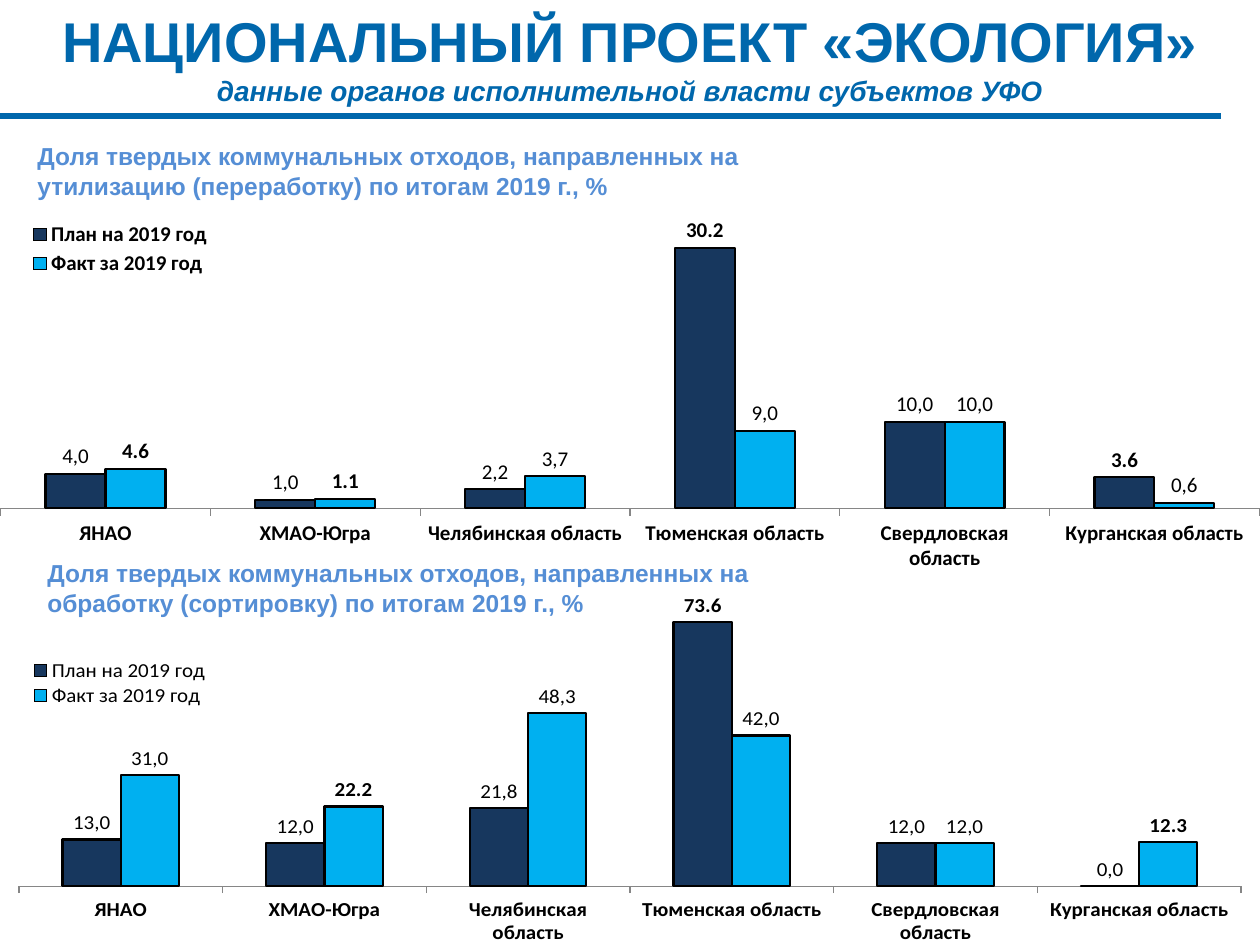
import pptx
import pptx.chart.data
import pptx.dml.color
import pptx.enum.chart
import pptx.enum.shapes
import pptx.enum.text
import pptx.oxml
import pptx.oxml.ns
import pptx.util

RGB = pptx.dml.color.RGBColor
BLUE = RGB(0x00, 0x67, 0xAC)
SOFT = RGB(0x55, 0x8E, 0xD5)
NAVY = RGB(0x17, 0x37, 0x5E)
SKY = RGB(0x00, 0xB0, 0xF0)
BLACK = RGB(0, 0, 0)
GREY = RGB(0x86, 0x86, 0x86)

SCALE = 914400 / 126
CATS = ["ЯНАО", "ХМАО-Югра", "Челябинская область", "Тюменская область",
        "Свердловская область", "Курганская область"]
NAMES = ["План на 2019 год", "Факт за 2019 год"]
qn = pptx.oxml.ns.qn


def px(n):
    return pptx.util.Emu(round(n * SCALE))


def node(tag, body=""):
    """Make a chart element from its tag and inner XML."""
    names = pptx.oxml.ns.nsdecls("c", "a")
    return pptx.oxml.parse_xml(f"<{tag} {names}>{body}</{tag}>")


def layout(box, inner=False):
    """Make a manual layout from fractions of the chart."""
    body = '<c:layoutTarget val="inner"/>' if inner else ""
    body += '<c:xMode val="edge"/><c:yMode val="edge"/>'
    body += "".join(f'<c:{k} val="{v}"/>' for k, v in zip("xywh", box))
    return node("c:layout", f"<c:manualLayout>{body}</c:manualLayout>")


class Deck:
    def __init__(self, wide, high):
        self.show = pptx.Presentation()
        self.show.slide_width, self.show.slide_height = px(wide), px(high)
        self.slide = self.show.slides.add_slide(self.show.slide_layouts[5])

    def font(self, font, size, color, bold=True, italic=False, face="Arial"):
        font.name, font.size = face, pptx.util.Pt(size)
        font.bold, font.italic = bold, italic
        font.color.rgb = color

    def title(self, box, head, sub):
        shape = self.slide.shapes.title
        shape.left, shape.top, shape.width, shape.height = map(px, box)
        frame = shape.text_frame
        frame.auto_size = pptx.enum.text.MSO_AUTO_SIZE.NONE
        frame.vertical_anchor = pptx.enum.text.MSO_ANCHOR.TOP
        frame.text = f"{head}\n{sub}"
        first, second = frame.paragraphs
        self.font(first.font, 32, BLUE)
        self.font(second.font, 16, BLUE, italic=True)
        for par in frame.paragraphs:
            par.alignment = pptx.enum.text.PP_ALIGN.CENTER

    def text(self, box, words):
        frame = self.slide.shapes.add_textbox(*map(px, box)).text_frame
        frame.word_wrap = True
        frame.text = words
        self.font(frame.paragraphs[0].font, 14, SOFT)

    def rule(self, x1, y1, x2, y2):
        kind = pptx.enum.shapes.MSO_CONNECTOR.STRAIGHT
        line = self.slide.shapes.add_connector(kind, *map(px, (x1, y1, x2, y2)))
        line.line.color.rgb = BLUE
        line.line.width = pptx.util.Pt(3)
        line._element.spPr.append(node("a:effectLst"))

    def chart(self, box, rows, light, top, plot_box, key_box, key_bold):
        """light: for each series, the points with a plain one-decimal label."""
        data = pptx.chart.data.CategoryChartData()
        data.categories = CATS
        for name, row in zip(NAMES, rows):
            data.add_series(name, row)
        kind = pptx.enum.chart.XL_CHART_TYPE.COLUMN_CLUSTERED
        chart = self.slide.shapes.add_chart(kind, *map(px, box), data).chart
        chart.has_title = False
        self.font(chart.font, 10, BLACK, False, face="Calibri")
        area = chart._chartSpace.find(qn("c:chart"))
        area.addnext(node("c:spPr", "<a:noFill/><a:ln><a:noFill/></a:ln>"))
        body = area.find(qn("c:plotArea"))
        for old in body.findall(qn("c:layout")):
            body.remove(old)
        body.insert(0, layout(plot_box, inner=True))

        # Axes
        marks = pptx.enum.chart.XL_TICK_MARK
        axis = chart.category_axis
        axis.major_tick_mark = marks.OUTSIDE
        axis.format.line.color.rgb = GREY
        self.font(axis.tick_labels.font, 12, BLACK, face="Calibri")
        scale = chart.value_axis
        scale.visible = scale.has_major_gridlines = False
        scale.minimum_scale, scale.maximum_scale = 0, top

        # Legend
        chart.has_legend = True
        key = chart.legend
        key.position = pptx.enum.chart.XL_LEGEND_POSITION.BOTTOM
        key.include_in_layout = False
        self.font(key.font, 12, BLACK, key_bold, face="Calibri")
        spot = key._element.find(qn("c:legendPos"))
        for old in key._element.findall(qn("c:layout")):
            key._element.remove(old)
        spot.addnext(layout(key_box))

        # Columns and their labels
        plot = chart.plots[0]
        plot.gap_width, plot.overlap = 150, 0
        plot.vary_by_categories = False
        above = pptx.enum.chart.XL_LABEL_POSITION.OUTSIDE_END
        for bars, color, row, plain in zip(plot.series, (NAVY, SKY), rows, light):
            bars.format.fill.solid()
            bars.format.fill.fore_color.rgb = color
            bars.format.line.color.rgb = BLACK
            bars.format.line.width = pptx.util.Pt(1.25)
            bars.invert_if_negative = False
            tags = bars.data_labels
            tags.show_value = True
            tags.position = above
            self.font(tags.font, 12, BLACK, face="Calibri")
            for i in plain:
                tag = bars.points[i].data_label
                tag.text_frame.text = f"{row[i]:.1f}".replace(".", ",")
                run = tag.text_frame.paragraphs[0].runs[0]
                self.font(run.font, 12, BLACK, False, face="Calibri")
                tag.position = above


def main():
    deck = Deck(1260, 945)

    # Heading
    deck.rule(0, 116, 1221, 116)
    deck.title((0, 0, 1260, 115), "НАЦИОНАЛЬНЫЙ ПРОЕКТ «ЭКОЛОГИЯ»",
               "данные органов исполнительной власти субъектов УФО")

    # Chart captions
    lead = "Доля твердых коммунальных отходов, направленных на "
    tail = " по итогам 2019 г., %"
    deck.text((25, 135, 753, 72), f"{lead}утилизацию (переработку){tail}")
    deck.text((35, 552, 745, 72), f"{lead}обработку (сортировку){tail}")

    # Recycling
    deck.chart((0, 195, 1260, 387),
               [(4, 1, 2.2, 30.2, 10, 3.6), (4.6, 1.1, 3.7, 9, 10, 0.6)],
               [(0, 1, 2, 4), (2, 3, 4, 5)], 35,
               (0, 0.03, 1, 0.78), (0.02, 0.06, 0.15, 0.16), True)
    # Sorting
    deck.chart((0, 582, 1260, 363),
               [(13, 12, 21.8, 73.6, 12, 0), (31, 22.2, 48.3, 42, 12, 12.3)],
               [(0, 1, 2, 4, 5), (0, 2, 3, 4)], 80,
               (0.015, 0.05, 0.97, 0.84), (0.02, 0.22, 0.15, 0.15), False)

    deck.show.save("out.pptx")


if __name__ == "__main__":
    main()
